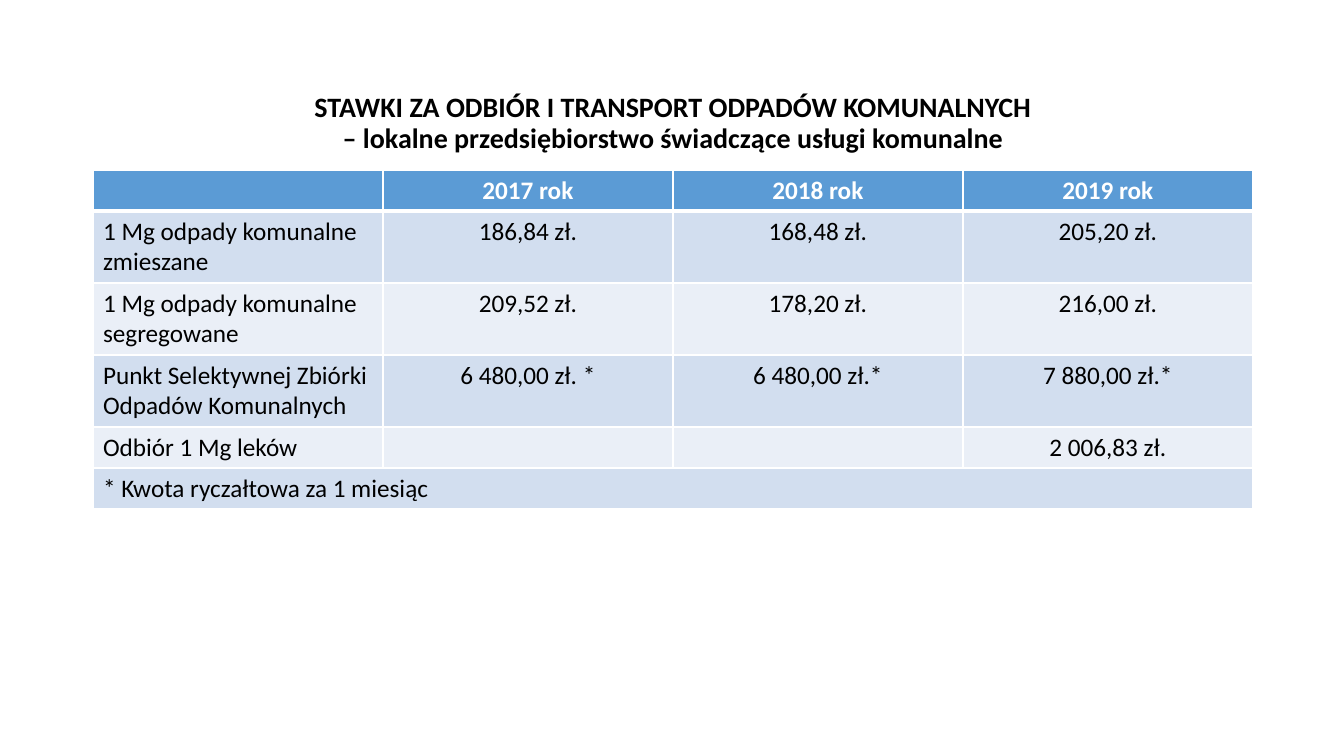
from dataclasses import dataclass

from lxml import etree
from pptx import Presentation, util as u
from pptx.dml.color import RGBColor
from pptx.enum import text
from pptx.oxml.ns import qn

# Content
TITLE = ["STAWKI ZA ODBIÓR I TRANSPORT ODPADÓW KOMUNALNYCH",
         "– lokalne przedsiębiorstwo świadczące usługi komunalne"]
YEARS = ["", "2017 rok", "2018 rok", "2019 rok"]
RATES = [
    ["1 Mg odpady komunalne zmieszane", "186,84 zł.", "168,48 zł.", "205,20 zł."],
    ["1 Mg odpady komunalne segregowane", "209,52 zł.", "178,20 zł.", "216,00 zł."],
    ["Punkt Selektywnej Zbiórki Odpadów Komunalnych",
     "6 480,00 zł. *", "6 480,00 zł.*", "7 880,00 zł.*"],
    ["Odbiór 1 Mg leków", "", "", "2 006,83 zł."],
]
FOOTNOTE = ["* Kwota ryczałtowa za 1 miesiąc", "", "", ""]


@dataclass(frozen=True)
class Theme:
    font: str = "Calibri"
    title_size: int = 20
    table_size: int = 18
    ink: str = "000000"
    white: str = "FFFFFF"
    header: str = "5B9BD5"
    bands: tuple = ("D2DEEF", "EAEFF7")
    line: int = 1
    header_line: int = 3


THEME = Theme()

# Layout in px
SLIDE_W, SLIDE_H = 1344, 756
LEFT, COLUMN_W = 93, 290
TITLE_TOP, TITLE_H = 32, 184
TABLE_TOP = 170
ROW_HEIGHTS = [41, 72, 72, 72, 41, 41]


def px(n):
    return round(n * 914400 / 100.8)


def add_run(paragraph, words, size, color, bold):
    run = paragraph.add_run()
    run.text = words
    run.font.name = THEME.font
    run.font.size = u.Pt(size)
    run.font.bold = bold
    run.font.color.rgb = RGBColor.from_string(color)


def set_borders(cell, bottom):
    props = cell._tc.get_or_add_tcPr()
    widths = {"a:lnL": THEME.line, "a:lnR": THEME.line,
              "a:lnT": THEME.line, "a:lnB": bottom}
    for position, (side, width) in enumerate(widths.items()):
        line = etree.Element(qn(side), w=str(u.Pt(width)))
        fill = etree.SubElement(line, qn("a:solidFill"))
        etree.SubElement(fill, qn("a:srgbClr"), val=THEME.white)
        props.insert(position, line)


def add_title(slide):
    frame = slide.shapes.add_textbox(
        px(LEFT), px(TITLE_TOP), px(4 * COLUMN_W), px(TITLE_H)).text_frame
    frame.word_wrap = True
    frame.vertical_anchor = text.MSO_ANCHOR.MIDDLE
    heading = frame.paragraphs[0]
    heading.alignment = text.PP_ALIGN.CENTER
    heading.line_spacing = 0.9
    for i, words in enumerate(TITLE):
        if i:
            heading.add_line_break()
        add_run(heading, words, THEME.title_size, THEME.ink, True)


def add_rates(slide):
    rows = [YEARS, *RATES, FOOTNOTE]
    rates = slide.shapes.add_table(
        len(rows), len(YEARS), px(LEFT), px(TABLE_TOP),
        px(len(YEARS) * COLUMN_W), px(sum(ROW_HEIGHTS))).table
    for column in rates.columns:
        column.width = px(COLUMN_W)
    for r, row in enumerate(rows):
        rates.rows[r].height = px(ROW_HEIGHTS[r])
        is_header = r == 0
        band = THEME.header if is_header else THEME.bands[(r - 1) % 2]
        for c, words in enumerate(row):
            cell = rates.cell(r, c)
            cell.fill.solid()
            cell.fill.fore_color.rgb = RGBColor.from_string(band)
            set_borders(cell, THEME.header_line if is_header else THEME.line)
            entry = cell.text_frame.paragraphs[0]
            entry.alignment = text.PP_ALIGN.CENTER if c else text.PP_ALIGN.LEFT
            if words:
                add_run(entry, words, THEME.table_size,
                        THEME.white if is_header else THEME.ink, is_header)
    # Footnote spans the full width
    last = len(rows) - 1
    rates.cell(last, 0).merge(rates.cell(last, len(YEARS) - 1))


def main():
    deck = Presentation()
    deck.slide_width, deck.slide_height = px(SLIDE_W), px(SLIDE_H)
    slide = deck.slides.add_slide(deck.slide_layouts[6])
    add_title(slide)
    add_rates(slide)
    deck.save("out.pptx")


if __name__ == "__main__":
    main()
